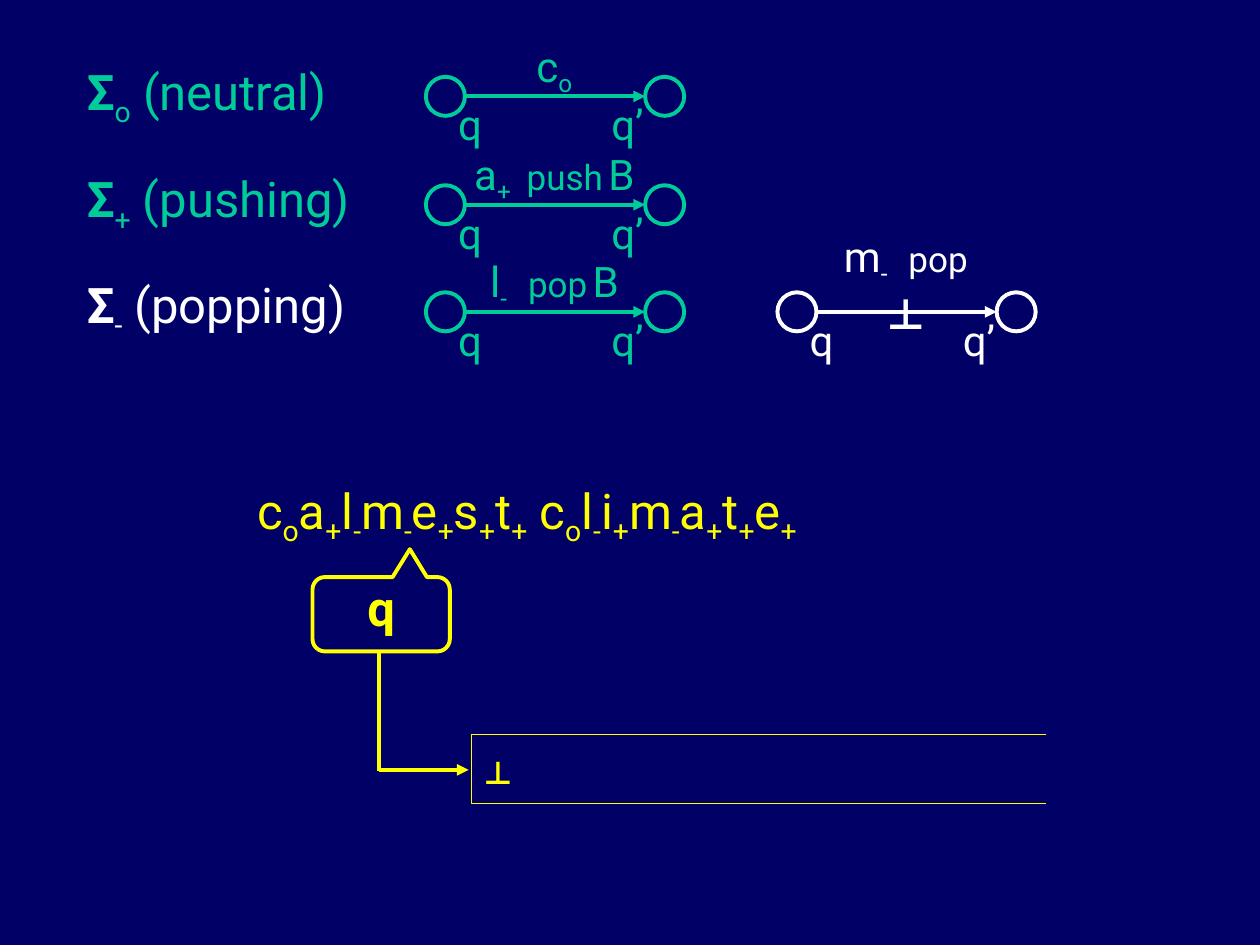
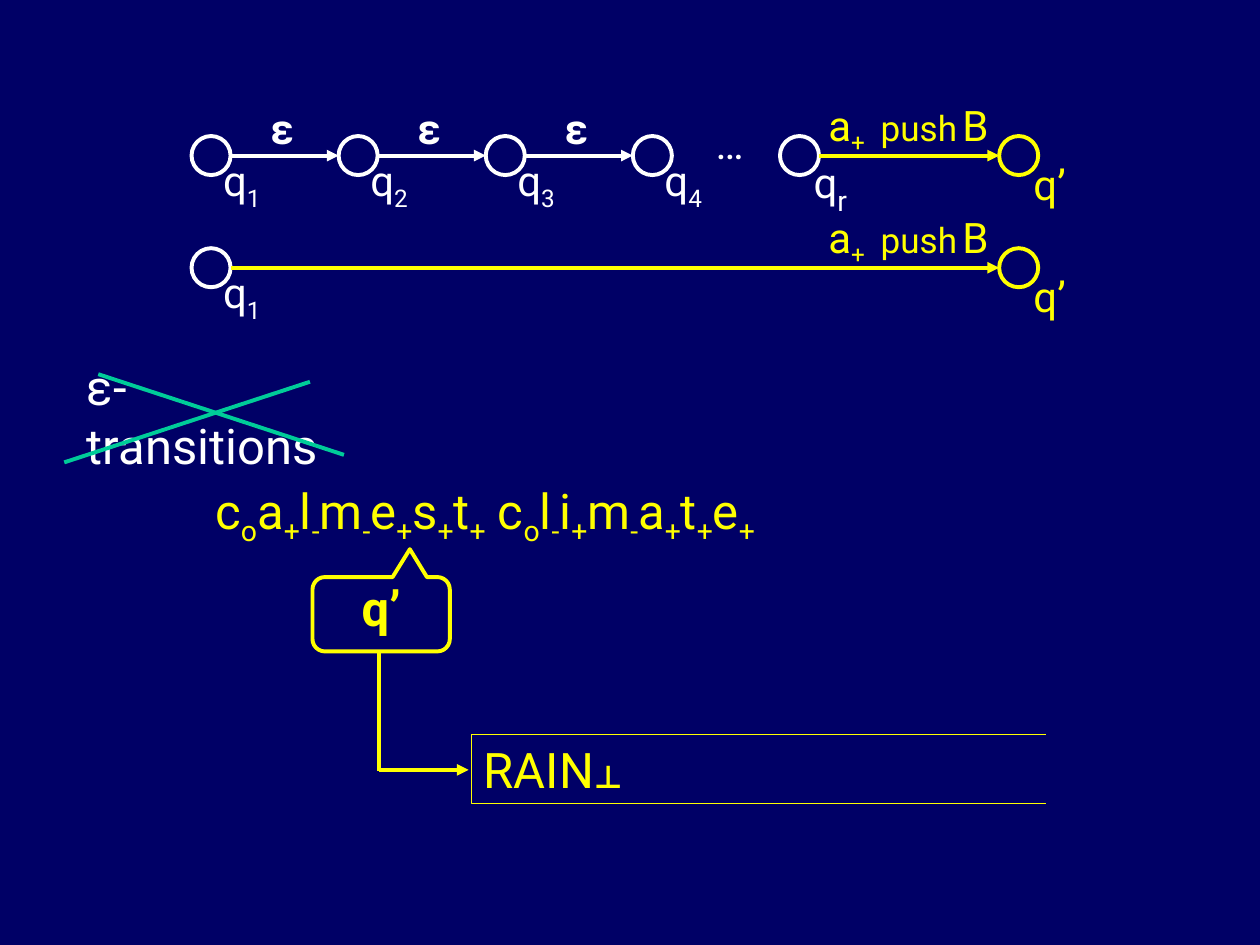
from lxml import etree
from pptx import Presentation
from pptx.dml.color import RGBColor
from pptx.enum.shapes import MSO_CONNECTOR, MSO_SHAPE
from pptx.enum.text import MSO_ANCHOR, PP_ALIGN
from pptx.oxml.ns import qn
from pptx.util import Inches, Pt

STRAIGHT = MSO_CONNECTOR.STRAIGHT
OVAL, RECTANGLE = MSO_SHAPE.OVAL, MSO_SHAPE.RECTANGLE
CALLOUT = MSO_SHAPE.ROUNDED_RECTANGULAR_CALLOUT
MIDDLE = MSO_ANCHOR.MIDDLE
LEFT, CENTER = PP_ALIGN.LEFT, PP_ALIGN.CENTER

NAVY = RGBColor(0x00, 0x00, 0x66)
GREEN = RGBColor(0x00, 0xCC, 0x99)
YELLOW = RGBColor(0xFF, 0xFF, 0x00)
WHITE = RGBColor(0xFF, 0xFF, 0xFF)
FONT = "Roboto"

# Run formats: font settings, then raw run attributes
BIG, MEDIUM, SMALL, TINY = 28, 24, 20, 12
BOLD = {"bold": True}
WORD = {"size": Pt(SMALL)}
SPACE = {"size": Pt(TINY)}
WIDE_SPACE = {"size": Pt(TINY), "spc": "600"}
WIDER_SPACE = {"size": Pt(TINY), "spc": "900"}
SUB = {"baseline": "-25000"}
BIG_SUB = {"size": Pt(BIG), "baseline": "-25000"}
BOTTOM = {"size": Pt(18), "bold": True}
RUN_ATTRIBUTES = ("baseline", "spc")

# Labels: runs and box width
Q = ([("q", {})], 0.25)
Q_PRIME = ([("q’", {})], 0.3)
Q_LAST = ([("q", {}), ("r", BIG_SUB)], 0.35)
EPSILON = ([("ε", BOLD)], 0.2)
ELLIPSIS = ([("…", {})], 0.25)
NEUTRAL = ([("c", {}), ("o", SUB)], 0.35)
PUSH = ([("a", {}), ("+", SUB), (" ", WIDE_SPACE), ("push", WORD),
         (" ", SPACE), ("B", {})], 1.4)
POP = ([("l", {}), ("-", SUB), (" ", WIDER_SPACE), ("pop", WORD),
        (" ", SPACE), ("B", {})], 1.15)
POP_BOTTOM = ([("m", {}), ("-", SUB), (" ", WIDER_SPACE), ("pop", WORD),
               (" ", SPACE), ("⊥", BOLD)], 1.2)

# Input word: letters and the stack sign of each
INPUT = [("calmest", "o+--+++"), ("climate", "o-+-+++")]

# Alphabet: sign, meaning, colour, heading top, state top, transition label
ALPHABET = [
    ("o", "neutral", GREEN, 0.47, 0.61, NEUTRAL),
    ("+", "pushing", GREEN, 1.32, 1.47, PUSH),
    ("-", "popping", WHITE, 2.16, 2.32, POP),
]

# Machine on each slide: state, left of the input word, stack content
MACHINES = [
    ("q", 2.04, [("⊥", BOTTOM)]),
    ("q’", 1.71, [("RAIN", {}), ("⊥", BOTTOM)]),
]

# Geometry of the state diagrams
DIAMETER = 0.31
SPAN = 1.74
HEADING_LEFT = 0.69
CHAIN_LEFT, CHAIN_END, CHAIN_STATES = 1.52, 6.19, 5
CHAIN_TOP, SHORTCUT_TOP = 1.08, 1.97
CROSS = [((0.51, 3.67), (2.46, 3.03)), ((0.78, 2.97), (2.73, 3.61))]


def write(shape, spans, size, color, align=LEFT, insets=(0, 0.05, 0, 0.05)):
    frame = shape.text_frame
    sides = ("margin_left", "margin_top", "margin_right", "margin_bottom")
    for side, inset in zip(sides, insets):
        setattr(frame, side, Inches(inset))
    frame.word_wrap = True
    frame.vertical_anchor = MIDDLE
    para = frame.paragraphs[0]
    para.alignment = align
    for text, changes in spans:
        span = para.add_run()
        span.text = text
        span.font.color.rgb = color
        look = {"name": FONT, "size": Pt(size), "bold": False, **changes}
        for key, value in look.items():
            if key in RUN_ATTRIBUTES:
                span.font._element.set(key, value)
            else:
                setattr(span.font, key, value)
    return para


def text_box(page, left, top, width, height, spans, size, color, align=LEFT):
    box = page.shapes.add_textbox(*map(Inches, (left, top, width, height)))
    write(box, spans, size, color, align)


def label(page, center, top, content, color):
    spans, width = content
    text_box(page, center - width / 2, top, width, 0.51,
             spans, MEDIUM, color, CENTER)


def outline(page, kind, bounds, color, weight, fill=None):
    shape = page.shapes.add_shape(kind, *map(Inches, bounds))
    shape.shadow.inherit = False
    if fill is None:
        shape.fill.background()
    else:
        shape.fill.solid()
        shape.fill.fore_color.rgb = fill
    shape.line.color.rgb = color
    shape.line.width = Pt(weight)
    return shape


def line(page, start, end, color, arrow=False):
    connector = page.shapes.add_connector(STRAIGHT, *map(Inches, start + end))
    connector.line.color.rgb = color
    connector.line.width = Pt(2.25)
    if arrow:
        head = etree.SubElement(connector.line._get_or_add_ln(), qn("a:tailEnd"))
        head.set("type", "triangle")
    etree.SubElement(connector._element.spPr, qn("a:effectLst"))


def state(page, left, top, content, color, shift=0.4):
    outline(page, OVAL, (left, top, DIAMETER, DIAMETER), color, 2.25)
    label(page, left + shift, top + 0.12, content, color)


def arrow(page, left, right, top, color):
    middle = top + DIAMETER / 2
    line(page, (left + DIAMETER, middle), (right, middle), color, arrow=True)


def transition(page, left, top, content, color):
    right = left + SPAN
    arrow(page, left, right, top, color)
    label(page, left + 1.02, top - 0.32, content, color)
    state(page, left, top, Q, color, shift=0.35)
    state(page, right, top, Q_PRIME, color, shift=-0.14)


def numbered(number):
    return [("q", {}), (str(number), SUB)], 0.35


def input_spans():
    spans = []
    for position, (letters, signs) in enumerate(INPUT):
        if position:
            spans.append((" ", {}))
        for letter, sign in zip(letters, signs):
            spans += [(letter, {}), (sign, SUB)]
    return spans


def machine(page, name, word_left, stack):
    # Reading head
    head = outline(page, CALLOUT, (2.48, 4.58, 1.09, 0.59), YELLOW, 2.25, NAVY)
    for index, value in enumerate((0.209, -0.875, 0.167)):
        head.adjustments[index] = value
    write(head, [(name, BOLD)], BIG, YELLOW, CENTER, (0.1, 0.05, 0.1, 0.16))

    # Input word
    box = page.shapes.add_textbox(*map(Inches, (word_left, 3.75, 5, 0.55)))
    write(box, input_spans(), BIG, YELLOW, insets=(0, 0.16, 0.1, 0.05))

    # Stack, open on the right
    cells = outline(page, RECTANGLE, (3.74, 5.83, 4.99, 0.55), YELLOW, 0.75)
    para = write(cells, stack, BIG, YELLOW, insets=(0.1, 0.16, 0.1, 0.05))
    para.line_spacing = 0.7
    outline(page, RECTANGLE, (8.31, 5.7, 1.69, 0.74), NAVY, 0.75, NAVY)

    # Link from head to stack
    line(page, (3.01, 6.11), (3.72, 6.11), YELLOW, arrow=True)
    line(page, (3.01, 6.12), (3.01, 5.17), YELLOW)


def alphabet_page(page):
    for sign, meaning, color, heading_top, top, content in ALPHABET:
        spans = [("Σ", BOLD), (sign, SUB), (f" ({meaning})", {})]
        text_box(page, HEADING_LEFT, heading_top, 2.15, 0.57, spans, BIG, color)
        transition(page, 3.38, top, content, GREEN)
    transition(page, 6.17, ALPHABET[-1][4], POP_BOTTOM, WHITE)


def epsilon_page(page):
    step = (CHAIN_END - CHAIN_LEFT) / (CHAIN_STATES - 1)
    lefts = [CHAIN_LEFT + step * index for index in range(CHAIN_STATES)]

    # Chain of empty moves
    for number, left in enumerate(lefts[:-1], start=1):
        state(page, left, CHAIN_TOP, numbered(number), WHITE)
    for left, right in zip(lefts, lefts[1:-1]):
        arrow(page, left, right, CHAIN_TOP, WHITE)
        label(page, (left + DIAMETER + right) / 2 - 0.02, CHAIN_TOP - 0.32,
              EPSILON, WHITE)
    label(page, 5.79, CHAIN_TOP - 0.2, ELLIPSIS, WHITE)
    state(page, CHAIN_END, CHAIN_TOP, Q_LAST, WHITE)

    # Shortcut, and the push that ends both rows
    state(page, CHAIN_LEFT, SHORTCUT_TOP, numbered(1), WHITE)
    for start, top in ((CHAIN_END, CHAIN_TOP), (CHAIN_LEFT, SHORTCUT_TOP)):
        arrow(page, start, CHAIN_END + SPAN, top, YELLOW)
        label(page, CHAIN_END + 1.02, top - 0.32, PUSH, YELLOW)
        state(page, CHAIN_END + SPAN, top, Q_PRIME, YELLOW)

    # Crossed-out heading
    text_box(page, HEADING_LEFT, 3.01, 2.05, 0.57,
             [("ε-transitions", {})], BIG, WHITE)
    for start, end in CROSS:
        line(page, start, end, GREEN)


def main():
    deck = Presentation()
    deck.slide_width, deck.slide_height = Inches(10), Inches(7.5)
    blank = deck.slide_layouts[6]
    for draw, parts in zip((alphabet_page, epsilon_page), MACHINES):
        page = deck.slides.add_slide(blank)
        page.background.fill.solid()
        page.background.fill.fore_color.rgb = NAVY
        draw(page)
        machine(page, *parts)
    deck.save("out.pptx")


if __name__ == "__main__":
    main()
